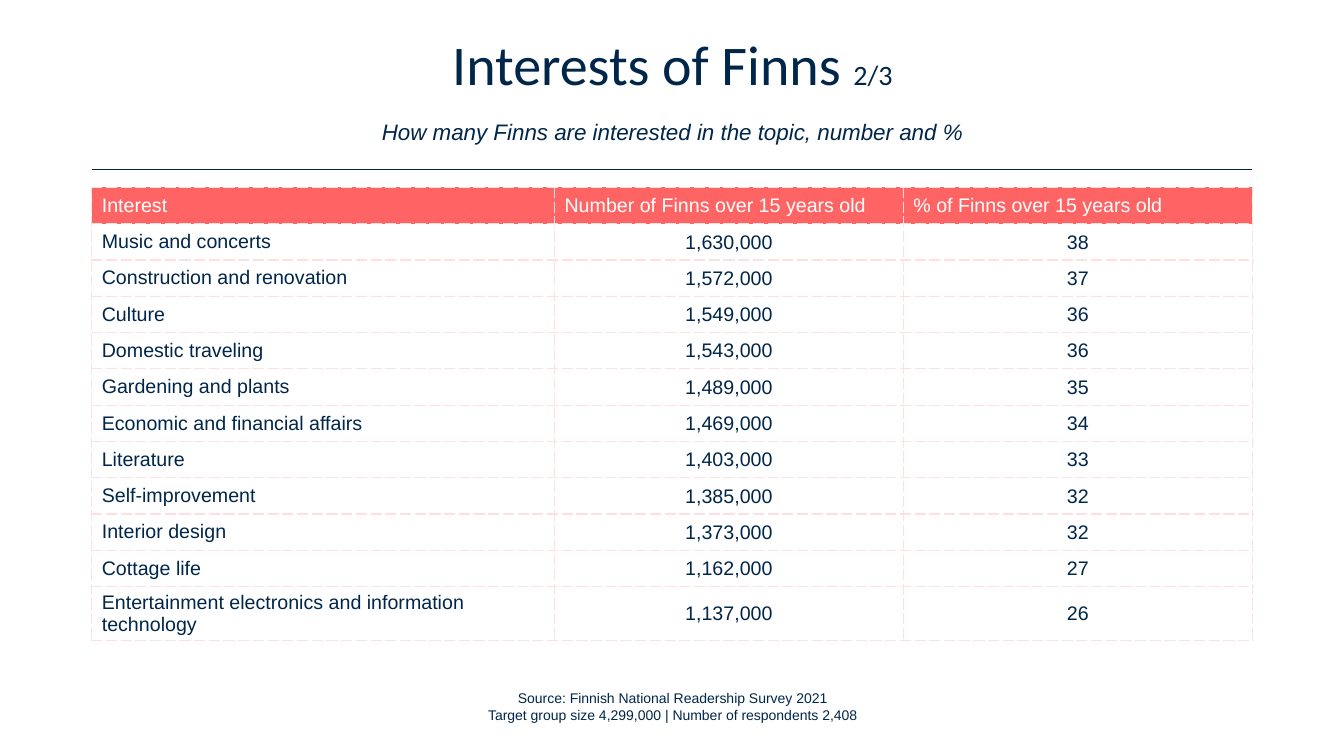
from lxml.etree import SubElement
from pptx import Presentation
from pptx.dml.color import RGBColor
from pptx.enum.shapes import MSO_CONNECTOR
from pptx.enum.text import MSO_ANCHOR, MSO_AUTO_SIZE, PP_ALIGN
from pptx.oxml.ns import qn
from pptx.util import Inches, Pt

NAVY = RGBColor(0x00, 0x26, 0x49)
CORAL = RGBColor(0xFF, 0x64, 0x64)
PALE_PINK = RGBColor(0xFF, 0xE0, 0xE0)
WHITE = RGBColor(0xFF, 0xFF, 0xFF)

HEADING = "Interests of Finns "
PAGE_COUNT = "2/3"
SUBTITLE = "How many Finns are interested in the topic, number and %"
HEADERS = ("Interest", "Number of Finns over 15 years old", "% of Finns over 15 years old")
INTERESTS = [
    ("Music and concerts", "1,630,000", "38"),
    ("Construction and renovation", "1,572,000", "37"),
    ("Culture", "1,549,000", "36"),
    ("Domestic traveling", "1,543,000", "36"),
    ("Gardening and plants", "1,489,000", "35"),
    ("Economic and financial affairs", "1,469,000", "34"),
    ("Literature", "1,403,000", "33"),
    ("Self-improvement", "1,385,000", "32"),
    ("Interior design", "1,373,000", "32"),
    ("Cottage life", "1,162,000", "27"),
    ("Entertainment electronics and information technology", "1,137,000", "26"),
]
SOURCE = (
    "Source: Finnish National Readership Survey 2021\v"
    "Target group size 4,299,000 | Number of respondents 2,408"
)

LEFT, CONTENT_WIDTH = 0.91, 11.51
COLUMN_WIDTHS = (4.59, 3.46, 3.46)
ROW_HEIGHT, LAST_ROW_HEIGHT = 0.36, 0.54


def style_run(run, size, color=NAVY, name="Arial", italic=False):
    run.font.size = Pt(size)
    run.font.name = name
    run.font.color.rgb = color
    run.font.italic = italic


def add_title(slide):
    title = slide.shapes.title
    title.left, title.top = Inches(0.92), Inches(0.42)
    title.width, title.height = Inches(11.5), Inches(1.07)
    frame = title.text_frame
    frame.auto_size = MSO_AUTO_SIZE.NONE
    frame.vertical_anchor = MSO_ANCHOR.MIDDLE
    paragraph = frame.paragraphs[0]
    paragraph.text = HEADING
    paragraph.alignment = PP_ALIGN.CENTER
    paragraph.line_spacing = Pt(35)
    paragraph.space_after = Pt(18)
    style_run(paragraph.runs[0], 40, name="Calibri")
    page_count = paragraph.add_run()
    page_count.text = PAGE_COUNT
    style_run(page_count, 20, name="Calibri")
    paragraph.add_line_break()
    subtitle = paragraph.add_run()
    subtitle.text = SUBTITLE
    style_run(subtitle, 16, italic=True)


def add_rule(slide):
    y = Inches(1.68)
    rule = slide.shapes.add_connector(
        MSO_CONNECTOR.STRAIGHT, Inches(LEFT), y, Inches(LEFT + CONTENT_WIDTH), y
    )
    rule.line.color.rgb = NAVY
    rule.line.width = Pt(1)
    SubElement(rule._element.spPr, qn("a:effectLst"))


def add_borders(cell):
    properties = cell._tc.get_or_add_tcPr()
    for side in ("a:lnL", "a:lnR", "a:lnT", "a:lnB"):
        border = SubElement(properties, qn(side), w=str(Pt(1)))
        fill = SubElement(border, qn("a:solidFill"))
        SubElement(fill, qn("a:srgbClr"), val=str(PALE_PINK))
        SubElement(border, qn("a:prstDash"), val="sysDash")


def fill_cell(cell, text, is_header, is_number):
    add_borders(cell)
    if is_header:
        cell.fill.solid()
        cell.fill.fore_color.rgb = CORAL
    else:
        cell.fill.background()
    cell.vertical_anchor = MSO_ANCHOR.MIDDLE
    cell.text_frame.text = text
    paragraph = cell.text_frame.paragraphs[0]
    style_run(paragraph.runs[0], 14, WHITE if is_header else NAVY)
    if is_number:
        paragraph.alignment = PP_ALIGN.CENTER
        cell.margin_left = cell.margin_right = cell.margin_top = Inches(0.01)
        cell.margin_bottom = 0


def add_interest_table(slide):
    rows = [HEADERS, *INTERESTS]
    row_heights = [ROW_HEIGHT] * len(INTERESTS) + [LAST_ROW_HEIGHT]
    table = slide.shapes.add_table(
        len(rows), len(HEADERS), Inches(LEFT), Inches(1.86),
        Inches(CONTENT_WIDTH), Inches(sum(row_heights)),
    ).table
    table.first_row = False
    table.horz_banding = False
    for column, width in zip(table.columns, COLUMN_WIDTHS):
        column.width = Inches(width)
    for r, (values, height) in enumerate(zip(rows, row_heights)):
        table.rows[r].height = Inches(height)
        for c, value in enumerate(values):
            fill_cell(table.cell(r, c), value, r == 0, r > 0 and c > 0)


def add_source(slide):
    source = slide.shapes.add_textbox(Inches(4.08), Inches(6.79), Inches(5.18), Inches(0.44))
    frame = source.text_frame
    frame.word_wrap = True
    frame.auto_size = MSO_AUTO_SIZE.SHAPE_TO_FIT_TEXT
    paragraph = frame.paragraphs[0]
    paragraph.text = SOURCE
    paragraph.alignment = PP_ALIGN.CENTER
    paragraph.font.size = Pt(10)
    for run in paragraph.runs:
        style_run(run, 10)


def main():
    presentation = Presentation()
    presentation.slide_width = Inches(13.33)
    presentation.slide_height = Inches(7.5)
    slide = presentation.slides.add_slide(presentation.slide_layouts[5])
    add_title(slide)
    add_rule(slide)
    add_interest_table(slide)
    add_source(slide)
    presentation.save("out.pptx")


if __name__ == "__main__":
    main()
